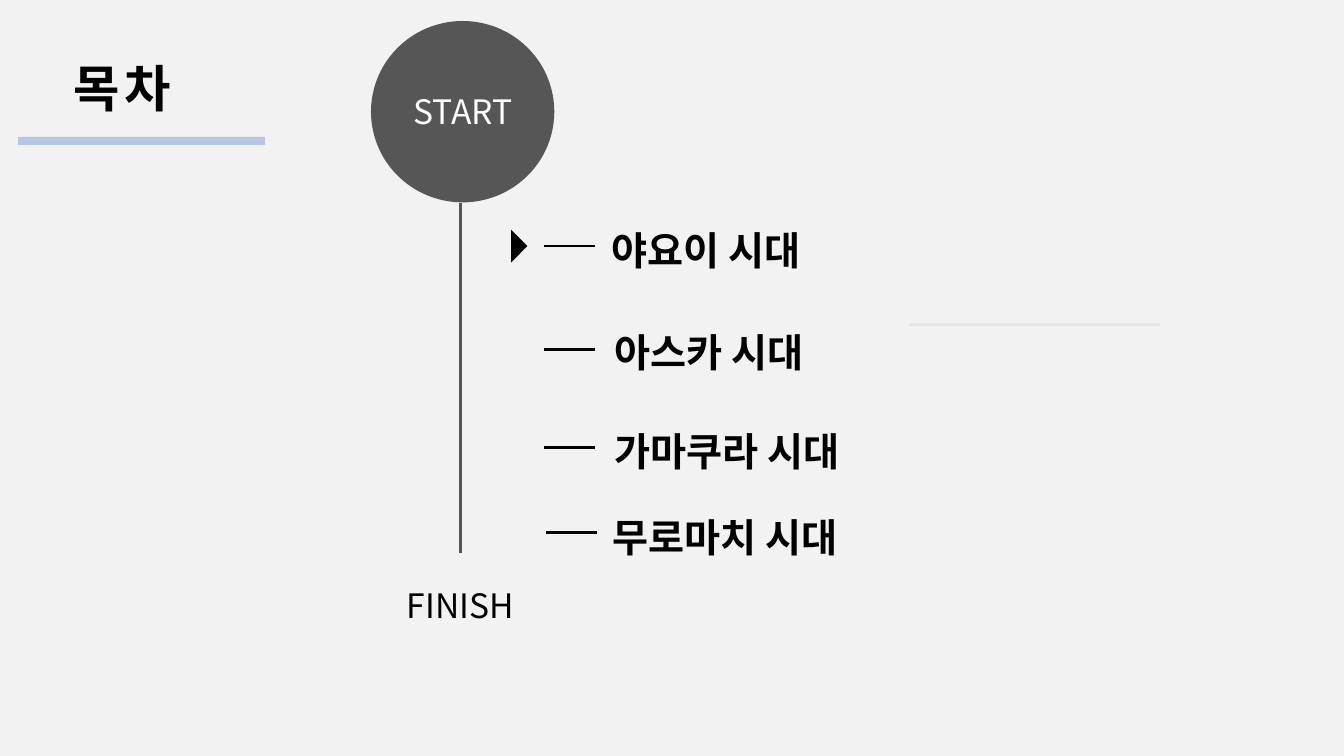
import pptx
import pptx.dml.color
import pptx.enum.shapes
import pptx.enum.text
import pptx.oxml
import pptx.oxml.ns
import pptx.util
from pptx.util import Cm

SHAPE = pptx.enum.shapes.MSO_SHAPE
ALIGN = pptx.enum.text.PP_ALIGN
ANCHOR = pptx.enum.text.MSO_ANCHOR
BLACK, GRAY, WHITE = "000000", "565656", "FFFFFF"


def rgb(color):
    return pptx.dml.color.RGBColor.from_string(color)


class Deck:
    """Holds the font, the presentation and the current slide."""

    font = "Noto Sans CJK KR"

    def __init__(self, width, height):
        self.prs = pptx.Presentation()
        self.prs.slide_width, self.prs.slide_height = Cm(width), Cm(height)

    def add_slide(self, background):
        self.s = self.prs.slides.add_slide(self.prs.slide_layouts[5])
        fill = self.s.background.fill
        fill.solid()
        fill.fore_color.rgb = rgb(background)

    def paint(self, sp, color):
        sp.shadow.inherit = False
        sp.fill.solid()
        sp.fill.fore_color.rgb = rgb(color)
        sp.line.fill.background()

    def set_text(self, sp, text, size, color, bold, align, anchor, spacing=0):
        tf = sp.text_frame
        tf.word_wrap = True
        tf.auto_size = pptx.enum.text.MSO_AUTO_SIZE.NONE
        tf.vertical_anchor = anchor
        p = tf.paragraphs[0]
        p.alignment = align
        r = p.add_run()
        r.text = text
        r.font.name, r.font.size = self.font, pptx.util.Pt(size)
        r.font.bold = bold
        r.font.color.rgb = rgb(color)
        rpr = r.font._element
        if spacing:
            rpr.set("spc", str(spacing * 100))
        ea = pptx.oxml.parse_xml(
            f'<a:ea {pptx.oxml.ns.nsdecls("a")} typeface="{self.font}"/>')
        rpr.find(pptx.oxml.ns.qn("a:latin")).addnext(ea)

    def title(self, text, x, y, w, h):
        sp = self.s.shapes.title
        sp.left, sp.top, sp.width, sp.height = Cm(x), Cm(y), Cm(w), Cm(h)
        self.set_text(sp, text, 36, BLACK, True, ALIGN.LEFT, ANCHOR.TOP, spacing=3)

    def text(self, text, x, y, w, h, size, color=BLACK, bold=False,
             align=ALIGN.CENTER, anchor=ANCHOR.MIDDLE):
        sp = self.s.shapes.add_textbox(Cm(x), Cm(y), Cm(w), Cm(h))
        tf = sp.text_frame
        tf.margin_left = tf.margin_right = Cm(0.1)
        tf.margin_top = tf.margin_bottom = Cm(0.1)
        self.set_text(sp, text, size, color, bold, align, anchor)

    def shape(self, kind, x, y, w, h, color):
        sp = self.s.shapes.add_shape(kind, Cm(x), Cm(y), Cm(w), Cm(h))
        self.paint(sp, color)

    def polygon(self, points, color):
        start, *rest = [(Cm(x), Cm(y)) for x, y in points]
        builder = self.s.shapes.build_freeform(*start)
        builder.add_line_segments(rest, close=True)
        self.paint(builder.convert_to_shape(), color)

    def line(self, x1, y1, x2, y2, color):
        c = self.s.shapes.add_connector(
            pptx.enum.shapes.MSO_CONNECTOR.STRAIGHT,
            Cm(x1), Cm(y1), Cm(x2), Cm(y2))
        c.line.color.rgb = rgb(color)
        c.line.width = pptx.util.Pt(2)
        c._element.spPr.append(pptx.oxml.parse_xml(
            f'<a:effectLst {pptx.oxml.ns.nsdecls("a")}/>'))


def main():
    deck = Deck(33.87, 19.05)
    deck.add_slide("F2F2F2")

    deck.shape(SHAPE.RECTANGLE, 0.46, 3.45, 6.22, 0.2, "B4C7E7")
    deck.title("목차", 1.6, 1.3, 13.11, 1.8)

    deck.line(11.61, 5.11, 11.61, 13.94, GRAY)
    deck.shape(SHAPE.OVAL, 9.35, 0.53, 4.62, 4.57, GRAY)
    deck.text("START", 10.19, 2.18, 2.95, 1.24, 24, WHITE)
    deck.text("FINISH", 10.13, 14.63, 2.95, 1.24, 24)
    deck.line(22.91, 8.18, 29.24, 8.18, "E5E5E5")

    # era, dash left, dash y, text left, text top, text width
    eras = [
        ("야요이 시대", 13.72, 6.2, 15.32, 5.61, 16.28),
        ("아스카 시대", 13.72, 8.81, 15.39, 8.18, 11.4),
        ("가마쿠라 시대", 13.72, 11.28, 15.39, 10.67, 11.63),
        ("무로마치 시대", 13.77, 13.41, 15.34, 12.83, 11.63),
    ]
    for era, dash_x, dash_y, x, y, w in eras:
        deck.line(dash_x, dash_y, dash_x + 1.27, dash_y, BLACK)
        deck.text(era, x, y, w, 1.17, 28, bold=True,
                  align=ALIGN.LEFT, anchor=ANCHOR.TOP)
    deck.polygon([(12.88, 6.62), (13.29, 6.2), (12.88, 5.79)], BLACK)

    deck.prs.save("out.pptx")


if __name__ == "__main__":
    main()
